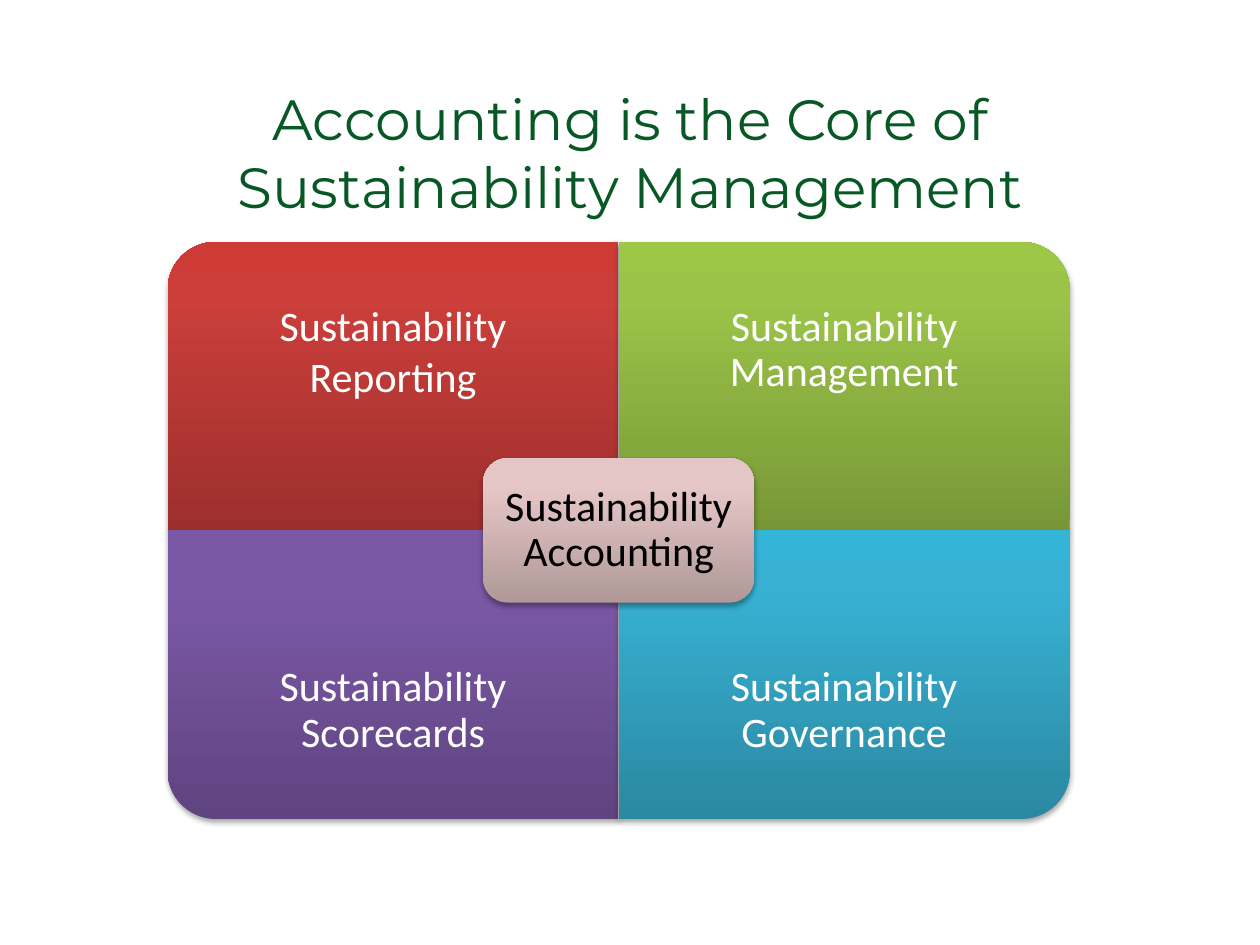
import pptx
import pptx.util
import pptx.dml.color
import pptx.enum.shapes
import pptx.enum.text
import pptx.oxml
import pptx.oxml.ns

Inches = pptx.util.Inches
SHAPE = pptx.enum.shapes.MSO_SHAPE
COLORS = {
    "title": "075825",
    "light text": "FFFFFF",
    "dark text": "000000",
    "shadow": "000000",
    # Gradient stops from bottom to top, at 0, 80 and 100 percent
    "reporting": ("9C2F2D", "CB3E3A", "CE3B37"),
    "management": ("779737", "9BC348", "9DC746"),
    "scorecards": ("5F4480", "7B58A6", "7C57A8"),
    "governance": ("2A88A2", "37B1D2", "34B4D6"),
    "accounting": ("B09998", "E5C6C6", "E6C7C6"),
}


def add_tile(shapes, preset, center_x, center_y, width, height, stops, rotation=0):
    """Add a tile with an upright gradient and a soft shadow."""
    if rotation % 180:
        width, height = height, width
    shape = shapes.add_shape(preset, Inches(center_x - width / 2), Inches(center_y - height / 2),
                             Inches(width), Inches(height))
    shape.rotation = rotation
    shape.line.fill.background()
    namespace = pptx.oxml.ns.nsdecls("a")
    stop_xml = "".join(f'<a:gs pos="{position}"><a:srgbClr val="{color}"/></a:gs>'
                       for position, color in zip((0, 80000, 100000), stops))
    properties = shape.element.spPr
    # The gradient stays upright when the tile is turned
    properties.insert(2, pptx.oxml.parse_xml(
        f'<a:gradFill {namespace} rotWithShape="0"><a:gsLst>{stop_xml}</a:gsLst>'
        '<a:lin ang="16200000" scaled="0"/></a:gradFill>'))
    properties.append(pptx.oxml.parse_xml(
        f'<a:effectLst {namespace}><a:outerShdw blurRad="40000" dist="23000" dir="5400000" '
        f'rotWithShape="0"><a:srgbClr val="{COLORS["shadow"]}"><a:alpha val="35000"/></a:srgbClr>'
        '</a:outerShdw></a:effectLst>'))


def add_label(shapes, left, top, width, height, lines, font, size, color, inset, spacing=None):
    """Add a centred text box with one paragraph for each line."""
    box = shapes.add_textbox(Inches(left), Inches(top), Inches(width), Inches(height))
    frame = box.text_frame
    frame.word_wrap = True
    frame.vertical_anchor = pptx.enum.text.MSO_ANCHOR.MIDDLE
    frame.margin_left = frame.margin_right = Inches(inset)
    frame.margin_top = frame.margin_bottom = Inches(inset)
    frame.text = "\n".join(lines)
    for paragraph in frame.paragraphs:
        paragraph.alignment = pptx.enum.text.PP_ALIGN.CENTER
        paragraph.line_spacing = spacing
        paragraph.font.name = font
        paragraph.font.size = pptx.util.Pt(size)
        paragraph.font.color.rgb = pptx.dml.color.RGBColor.from_string(color)


presentation = pptx.Presentation()
presentation.slide_width, presentation.slide_height = Inches(10), Inches(7.5)
slide = presentation.slides.add_slide(presentation.slide_layouts[6])

# Title
add_label(slide.shapes, 0.5, 0.58, 9, 1.25,
          ["Accounting is the Core of Sustainability Management"],
          "Montserrat", 32.4, COLORS["title"], 0.1)

# Matrix: two columns and two rows, rounded at the outer corners
left, top, column, row = 1.33, 1.92, 3.58, 2.29
label_height = 0.75 * row
quadrants = [
    (0, 0, 270, "reporting", ["Sustainability", "Reporting"], None),
    (1, 0, 0, "management", ["Sustainability Management"], 0.9),
    (0, 1, 180, "scorecards", ["Sustainability Scorecards"], 0.9),
    (1, 1, 90, "governance", ["Sustainability Governance"], 0.9),
]
matrix = slide.shapes.add_group_shape().shapes
for x, y, rotation, name, lines, spacing in quadrants:
    add_tile(matrix, SHAPE.ROUND_1_RECTANGLE, left + (x + 0.5) * column, top + (y + 0.5) * row,
             column, row, COLORS[name], rotation)
    # Labels sit against the outer edge of their row
    add_label(matrix, left + x * column, top + y * (2 * row - label_height), column, label_height,
              lines, "Calibri", 24, COLORS["light text"], 0.19, spacing)

# Core tile over the middle of the matrix
core_width, core_height, core_edge = 0.6 * column, 0.5 * row, 0.06
core_x, core_y = left + column, top + row
add_tile(matrix, SHAPE.ROUNDED_RECTANGLE, core_x, core_y, core_width, core_height,
         COLORS["accounting"])
add_label(matrix, core_x - core_width / 2 + core_edge, core_y - core_height / 2 + core_edge,
          core_width - 2 * core_edge, core_height - 2 * core_edge,
          ["Sustainability Accounting"], "Calibri", 24, COLORS["dark text"], 0.1, 0.9)

presentation.save("out.pptx")
